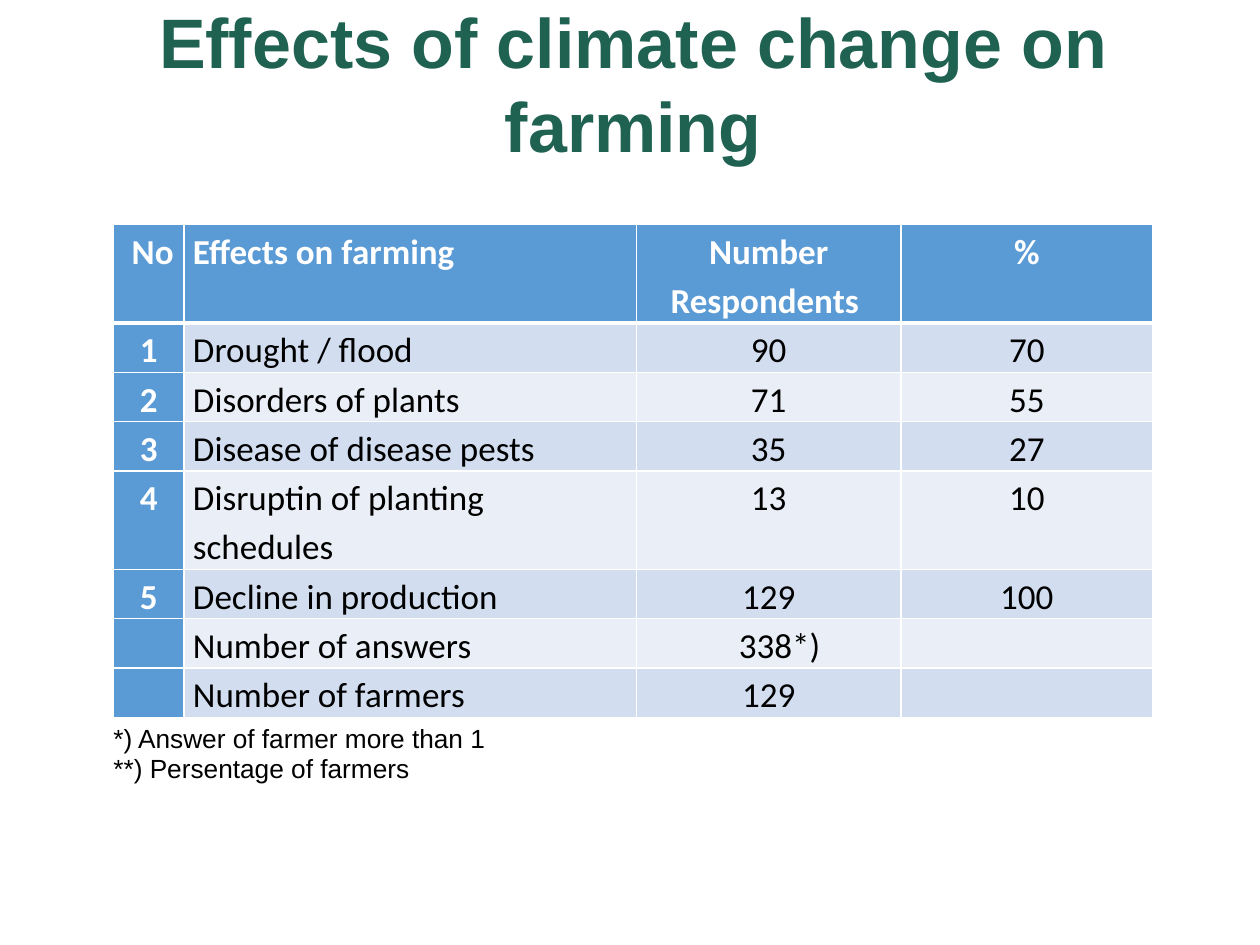
"""Build a slide with a table of climate change effects on farming."""
from dataclasses import dataclass

from lxml.etree import SubElement
from pptx import Presentation
from pptx.dml.color import RGBColor
from pptx.enum.text import MSO_ANCHOR, MSO_AUTO_SIZE, PP_ALIGN
from pptx.oxml.ns import qn
from pptx.util import Pt

GREEN = RGBColor(0x20, 0x62, 0x52)
BLUE = RGBColor(0x5B, 0x9B, 0xD5)
BANDS = (RGBColor(0xEA, 0xEF, 0xF7), RGBColor(0xD2, 0xDE, 0xEF))
WHITE = RGBColor(0xFF, 0xFF, 0xFF)
BLACK = RGBColor(0, 0, 0)

LEFT, WIDTH = 64.8, 594
COL_WIDTHS = (40.5, 258.5, 151, 144)
HEAD_HEIGHT, ROW_HEIGHT = 51, 27.4


@dataclass(frozen=True)
class Row:
    no: str
    effect: str
    number: str
    percent: str = ""
    indent: float = 0

    def texts(self) -> tuple:
        return self.no, self.effect, self.number, self.percent


ROWS = (
    Row(" No", "Effects on farming", "Number Respondents ", "%"),
    Row("1", "Drought / flood", "90", "70"),
    Row("2", "Disorders of plants", "71", "55"),
    Row("3", "Disease of disease pests", "35", "27"),
    Row("4", "Disruptin of planting schedules", "13", "10"),
    Row("5", "Decline in production", "129", "100"),
    Row("", "Number of answers", "338*)", indent=12.5),
    Row("", "Number of farmers", "129"),
)
NOTES = ("*) Answer of farmer more than 1", "**) Persentage of farmers")


def set_attrs(obj, **values) -> None:
    for name, value in values.items():
        setattr(obj, name, value)


def add_run(p, text: str, color: RGBColor, **fmt) -> None:
    r = p.add_run()
    r.text = text
    set_attrs(r.font, **fmt)
    r.font.color.rgb = color


def place(sp, top: float, height: float) -> None:
    set_attrs(sp, left=Pt(LEFT), top=Pt(top), width=Pt(WIDTH), height=Pt(height))


def add_title(sp, text: str) -> None:
    place(sp, 31.7, 67)
    set_attrs(sp.text_frame, vertical_anchor=MSO_ANCHOR.BOTTOM,
              auto_size=MSO_AUTO_SIZE.NONE, word_wrap=True)
    p = sp.text_frame.paragraphs[0]
    p.alignment = PP_ALIGN.CENTER
    add_run(p, text, GREEN, name="Arial", size=Pt(40), bold=True)


def add_notes(sp, notes: tuple) -> None:
    place(sp, 412.6, 49)
    tf = sp.text_frame
    set_attrs(tf, margin_left=0, margin_right=0, word_wrap=True,
              auto_size=MSO_AUTO_SIZE.NONE)
    for i, note in enumerate(notes):
        p = tf.add_paragraph() if i else tf.paragraphs[0]
        set_attrs(p, line_spacing=0.8, space_before=Pt(3))
        pPr = p._p.get_or_add_pPr()
        pPr.set("marL", "0")
        pPr.set("indent", "0")
        SubElement(pPr, qn("a:buNone"))
        add_run(p, note, BLACK, name="Arial", size=Pt(15))


def add_borders(cell, header: bool) -> None:
    tcPr = cell._tc.get_or_add_tcPr()
    for side in ("L", "R", "T", "B"):
        width = 3 if header and side == "B" else 1
        ln = SubElement(tcPr, qn(f"a:ln{side}"), w=str(Pt(width)))
        SubElement(SubElement(ln, qn("a:solidFill")), qn("a:srgbClr"), val=str(WHITE))


def fill_cell(cell, text: str, row: int, col: int, indent: float) -> None:
    strong = row == 0 or col == 0
    set_attrs(cell, margin_left=Pt(5), margin_right=Pt(5), margin_top=0, margin_bottom=0)
    add_borders(cell, row == 0)
    cell.fill.solid()
    cell.fill.fore_color.rgb = BLUE if strong else BANDS[row % 2]
    if text:
        p = cell.text_frame.paragraphs[0]
        set_attrs(p, line_spacing=1.15,
                  alignment=PP_ALIGN.LEFT if col == 1 else PP_ALIGN.CENTER)
        if indent and col == 2:
            p._p.get_or_add_pPr().set("marL", str(Pt(indent)))
        add_run(p, text, WHITE if strong else BLACK,
                name="Calibri", size=Pt(20), bold=strong)


def add_effects_table(s, rows: tuple) -> None:
    height = HEAD_HEIGHT + ROW_HEIGHT * (len(rows) - 1)
    table = s.shapes.add_table(len(rows), len(COL_WIDTHS), Pt(LEFT), Pt(128.2),
                               Pt(WIDTH), Pt(height)).table
    for column, width in zip(table.columns, COL_WIDTHS):
        column.width = Pt(width)
    for i, row in enumerate(rows):
        table.rows[i].height = Pt(ROW_HEIGHT if i else HEAD_HEIGHT)
        for j, text in enumerate(row.texts()):
            fill_cell(table.cell(i, j), text, i, j, row.indent)


def main() -> None:
    prs = Presentation()
    set_attrs(prs, slide_width=Pt(720), slide_height=Pt(540))
    s = prs.slides.add_slide(prs.slide_layouts[1])
    add_title(s.shapes.title, "Effects of climate change on farming")
    add_notes(s.placeholders[1], NOTES)
    add_effects_table(s, ROWS)
    prs.save("out.pptx")


if __name__ == "__main__":
    main()
